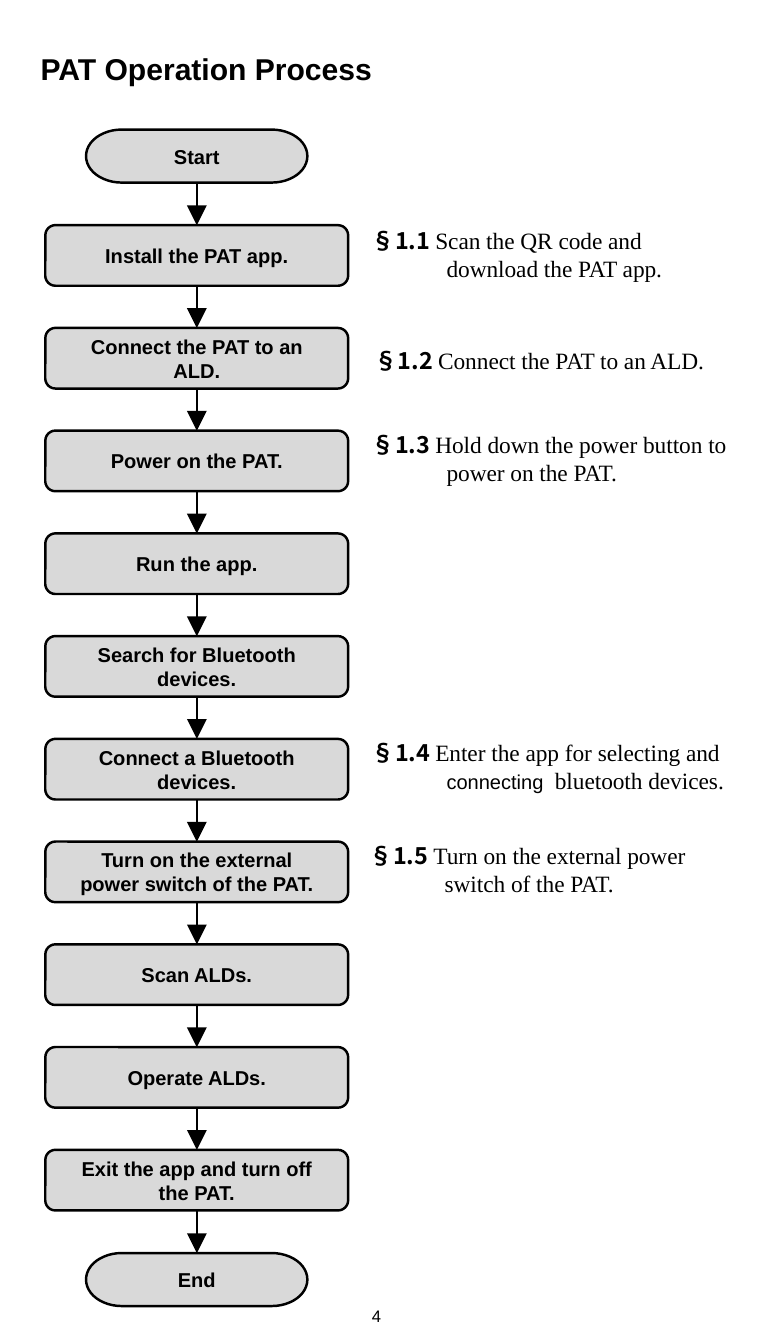
"""Build the slide with the PAT operation flowchart and its section notes."""
from lxml.etree import SubElement
from pptx import Presentation
from pptx.dml.color import RGBColor
from pptx.enum.shapes import MSO_CONNECTOR, MSO_SHAPE
from pptx.enum.text import MSO_ANCHOR, PP_ALIGN
from pptx.oxml.ns import qn
from pptx.util import Cm, Pt


def color(hex_value):
    return RGBColor.from_string(hex_value)


def write(shape, *runs, size=6, font="Arial", bold=False, align=PP_ALIGN.LEFT,
          anchor=MSO_ANCHOR.TOP, wrap=True, inset=(0.25, 0.13), hanging=0):
    frame = shape.text_frame
    frame.word_wrap = wrap
    frame.vertical_anchor = anchor
    frame.margin_left = frame.margin_right = Cm(inset[0])
    frame.margin_top = frame.margin_bottom = Cm(inset[1])
    paragraph = frame.paragraphs[0]
    paragraph.alignment = align
    if hanging:
        properties = paragraph._p.get_or_add_pPr()
        properties.set("marL", str(Cm(hanging)))
        properties.set("indent", str(-Cm(hanging)))
    for text, changes in runs:
        run = paragraph.add_run()
        run.text = text
        run.font.size = Pt(changes.get("size", size))
        run.font.name = changes.get("font", font)
        run.font.bold = changes.get("bold", bold)
        run.font.color.rgb = color("000000")


presentation = Presentation()
presentation.slide_width = Cm(8.2)
presentation.slide_height = Cm(14.2)
slide = presentation.slides.add_slide(presentation.slide_layouts[6])
shapes = slide.shapes

title = shapes.add_textbox(Cm(0.3), Cm(0.53), Cm(7.6), Cm(0.38))
write(title, ("PAT Operation Process", {}), size=9, bold=True,
      anchor=MSO_ANCHOR.MIDDLE, inset=(0.13, 0.07))

page_number = shapes.add_textbox(Cm(3.68), Cm(13.69), Cm(0.61), Cm(0.48))
write(page_number, ("4", {}), size=5, wrap=False)

serif = {"font": "Times New Roman"}
notes = [
    (3.68, 2.26, 0.79, "§1.1 ", [("Scan the QR code and download the PAT app.", serif)]),
    (3.71, 3.53, 0, "§1.2 ", [("Connect the PAT to an ALD.", serif)]),
    (3.68, 4.42, 0.79, "§1.3 ", [("Hold down the power button to power on the PAT.", serif)]),
    (3.68, 7.67, 0.79, "§1.4 ", [("Enter the app for selecting and ", serif),
                                 ("connecting ", {"size": 6}),
                                 (" bluetooth devices.", serif)]),
    (3.66, 8.76, 0.79, "§1.5 ", [("Turn on the external power switch of the PAT.", serif)]),
]
for left, top, hanging, section, explanation in notes:
    note = shapes.add_textbox(Cm(left), Cm(top), Cm(4.29), Cm(0.86 if hanging else 0.56))
    write(note, (section, {"font": "Noto Sans CJK SC", "bold": True}), *explanation,
          size=7, hanging=hanging)

actions = [
    "Install the PAT app.",
    "Connect the PAT to an ALD.",
    "Power on the PAT.",
    "Run the app.",
    "Search for Bluetooth devices.",
    "Connect a Bluetooth devices.",
    "Turn on the external power switch of the PAT.",
    "Scan ALDs.",
    "Operate ALDs.",
    "Exit the app and turn off the PAT.",
]
first_top, last_top = 2.38, 12.15
pitch = (last_top - first_top) / (len(actions) - 1)
center = 2.08
terminator = (MSO_SHAPE.FLOWCHART_TERMINATOR, 2.34, 0.56)
box = (MSO_SHAPE.ROUNDED_RECTANGLE, 3.2, 0.64)
steps = [("Start", 1.37, terminator)]
steps += [(action, first_top + i * pitch, box) for i, action in enumerate(actions)]
steps += [("End", 13.24, terminator)]

previous = None
for label, top, (outline, width, height) in steps:
    step = shapes.add_shape(outline, Cm(center - width / 2), Cm(top), Cm(width), Cm(height))
    step.shadow.inherit = False
    step.fill.solid()
    step.fill.fore_color.rgb = color("D9D9D9")
    step.line.color.rgb = color("000000")
    step.line.width = Pt(0.75)
    write(step, (label, {}), bold=True, align=PP_ALIGN.CENTER, anchor=MSO_ANCHOR.MIDDLE)
    if previous is not None:
        arrow = shapes.add_connector(MSO_CONNECTOR.STRAIGHT, 0, 0, 0, 0)
        arrow.begin_connect(previous, 2)
        arrow.end_connect(step, 0)
        arrow.line.color.rgb = color("000000")
        arrow.line.width = Pt(0.75)
        SubElement(arrow.line._get_or_add_ln(), qn("a:tailEnd"), type="triangle")
        SubElement(arrow._element.spPr, qn("a:effectLst"))
    previous = step

presentation.save("out.pptx")
